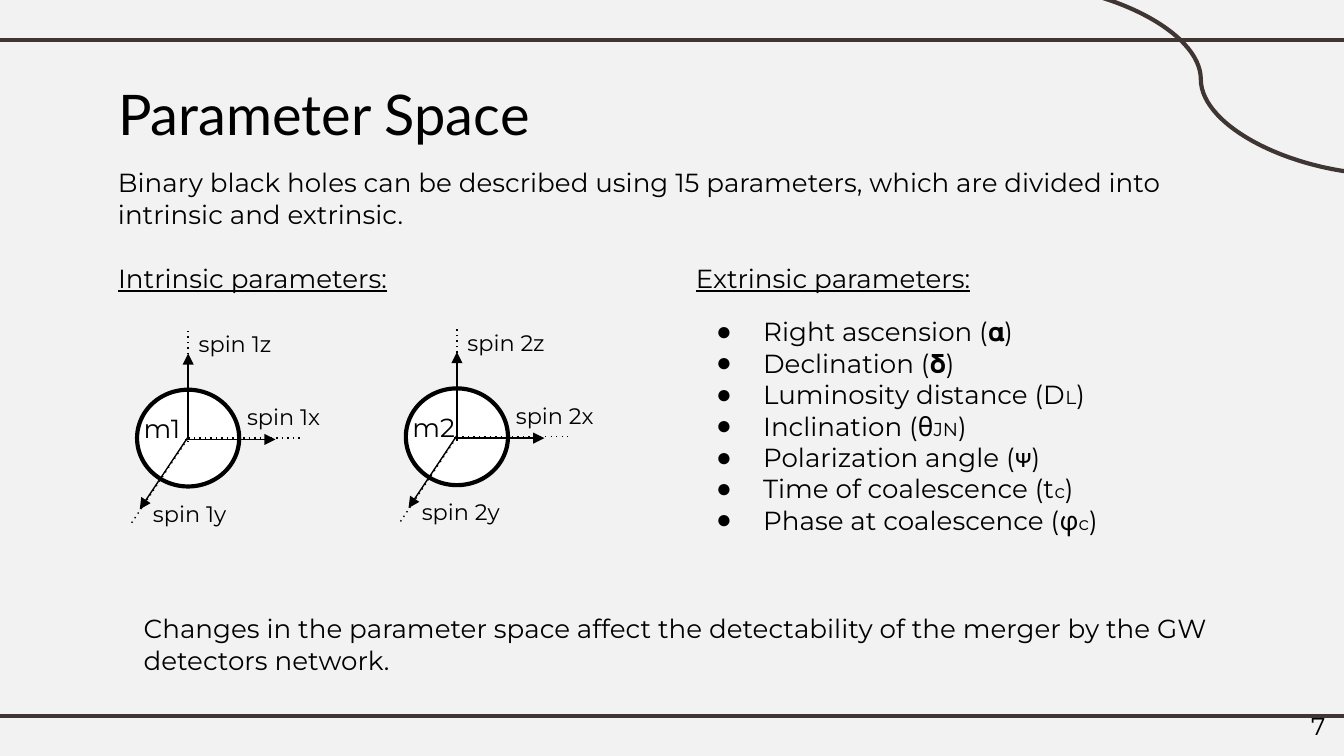
from lxml.etree import SubElement
from pptx import Presentation
from pptx.dml.color import RGBColor
from pptx.enum.shapes import MSO_CONNECTOR as Connector, MSO_SHAPE as Shape
from pptx.enum.text import MSO_ANCHOR as Anchor, PP_ALIGN as Align
from pptx.oxml.ns import qn
from pptx.util import Inches, Pt

COLORS = {"background": "F2F2F2", "frame": "3F3533", "ink": "000000", "hole": "FFFFFF"}
BODY_FONT = "Montserrat"
BULLET_FONT = "Arial"
BODY_SIZE = 14
SUBSCRIPT_SIZE = 10

# Each entry: text before the subscript, subscript, text after it
EXTRINSIC = [
    ("Right ascension (𝛂)", "", ""),
    ("Declination (𝛅)", "", ""),
    ("Luminosity distance (D", "L", ")"),
    ("Inclination (θ", "JN", ")"),
    ("Polarization angle (ᴪ)", "", ""),
    ("Time of coalescence (t", "c", ")"),
    ("Phase at coalescence (φ", "c", ")"),
]

# Start and end of each line, as offsets from the centre of the black hole
AXES = [((0, 0), (0.85, 0)), ((-0.42, 0.63), (0, 0)), ((0, 0.03), (0, -0.81))]
SPINS = [((0, 0), (0, -0.63)), ((-0.02, 0.01), (0.65, 0.01)), ((0, -0.01), (-0.36, 0.53))]
# Axis name, offset of its label and label width
SPIN_LABELS = [("z", -0.02, -0.9, 1.24), ("x", 0.34, -0.36, 1.24), ("y", -0.36, 0.36, 0.93)]


def color(name):
    return RGBColor.from_string(COLORS[name])


def add_span(para, text, size=BODY_SIZE, font=BODY_FONT, underline=None):
    span = para.add_run()
    span.text = text
    span.font.size = Pt(size)
    span.font.name = font
    span.font.underline = underline
    span.font.color.rgb = color("ink")


def set_frame(frame):
    """Give a text frame equal margins, wrapping and top alignment."""
    frame.word_wrap = True
    frame.vertical_anchor = Anchor.TOP
    frame.margin_left = frame.margin_right = Inches(0.1)
    frame.margin_top = frame.margin_bottom = Inches(0.1)


def add_text(page, left, top, width, height, text, size=BODY_SIZE, underline=None):
    box = page.shapes.add_textbox(Inches(left), Inches(top), Inches(width), Inches(height))
    set_frame(box.text_frame)
    add_span(box.text_frame.paragraphs[0], text, size, underline=underline)
    return box


def add_line(page, start, end, width=0.75, ink="ink", kind=Connector.STRAIGHT,
             dotted=False, arrow=False):
    line = page.shapes.add_connector(kind, *[Inches(value) for value in (*start, *end)])
    line.line.width = Pt(width)
    line.line.color.rgb = color(ink)
    outline = line.line._get_or_add_ln()
    if dotted:
        SubElement(outline, qn("a:prstDash"), val="dot")
    if arrow:
        SubElement(outline, qn("a:tailEnd"), type="triangle")
    SubElement(line._element.spPr, qn("a:effectLst"))


def add_frame_lines(page):
    for y in (0.3, 5.33):
        add_line(page, (-0.08, y), (10.08, y), 2.25, "frame")
    add_line(page, (7.53, -0.12), (10.34, 1.3), 2.25, "frame", Connector.CURVE)


def add_title(page, text):
    title = page.shapes.title
    title.left, title.top = Inches(0.78), Inches(0.49)
    title.width, title.height = Inches(5.15), Inches(0.63)
    set_frame(title.text_frame)
    para = title.text_frame.paragraphs[0]
    para.alignment = Align.LEFT
    add_span(para, text, 30, "Lato")


def add_black_hole(page, number, x, y, mass_width):
    """Draw a mass centred on (x, y) with its three spin axes."""
    hole = page.shapes.add_shape(Shape.FLOWCHART_CONNECTOR, Inches(x - 0.38),
                                 Inches(y - 0.36), Inches(0.76), Inches(0.72))
    hole.shadow.inherit = False
    hole.fill.solid()
    hole.fill.fore_color.rgb = color("hole")
    hole.line.color.rgb = color("ink")
    hole.line.width = Pt(2.25)

    def add_rays(rays, **style):
        for (x1, y1), (x2, y2) in rays:
            add_line(page, (x + x1, y + y1), (x + x2, y + y2), **style)

    add_rays(AXES, dotted=True)
    add_text(page, x - 0.43, y - 0.29, mass_width, 0.44, f"m{number}")
    add_rays(SPINS, arrow=True)
    for axis, dx, dy, width in SPIN_LABELS:
        add_text(page, x + dx, y + dy, width, 0.4, f"spin {number}{axis}", 12)


def add_bullet(para):
    properties = para._p.get_or_add_pPr()
    properties.set("marL", str(Inches(0.5)))
    properties.set("indent", str(Inches(-0.35)))
    bullet_color = SubElement(properties, qn("a:buClr"))
    SubElement(bullet_color, qn("a:srgbClr"), val=COLORS["ink"])
    SubElement(properties, qn("a:buSzPts"), val=str(BODY_SIZE * 100))
    SubElement(properties, qn("a:buFont"), typeface=BULLET_FONT)
    SubElement(properties, qn("a:buChar"), char="●")


def add_extrinsic_list(page):
    box = add_text(page, 5.08, 1.85, 3.57, 2.27, "Extrinsic parameters:", underline=True)
    for index, (before, subscript, after) in enumerate(EXTRINSIC):
        para = box.text_frame.add_paragraph()
        if index == 0:
            para.space_before = Pt(12)
        add_bullet(para)
        add_span(para, before)
        if subscript:
            add_span(para, subscript, SUBSCRIPT_SIZE)
            add_span(para, after)


def main():
    deck = Presentation()
    deck.slide_width = Inches(10)
    deck.slide_height = Inches(10) * 9 // 16
    page = deck.slides.add_slide(deck.slide_layouts[5])
    page.background.fill.solid()
    page.background.fill.fore_color.rgb = color("background")

    add_frame_lines(page)
    add_title(page, "Parameter Space")
    add_text(page, 0.78, 1.85, 2.78, 0.4, "Intrinsic parameters:", underline=True)
    add_black_hole(page, 1, 1.4, 3.26, mass_width=0.5)
    add_black_hole(page, 2, 3.4, 3.25, mass_width=0.54)
    add_text(page, 0.78, 1.14, 8.63, 0.63,
             "Binary black holes can be described using 15 parameters, "
             "which are divided into intrinsic and extrinsic.")
    add_extrinsic_list(page)
    add_text(page, 0.97, 4.46, 8.44, 0.63,
             "Changes in the parameter space affect the detectability "
             "of the merger by the GW detectors network.")
    number = add_text(page, 9.36, 5.19, 0.6, 0.43, "7", 13)
    number.text_frame.paragraphs[0].alignment = Align.RIGHT
    deck.save("out.pptx")


if __name__ == "__main__":
    main()
